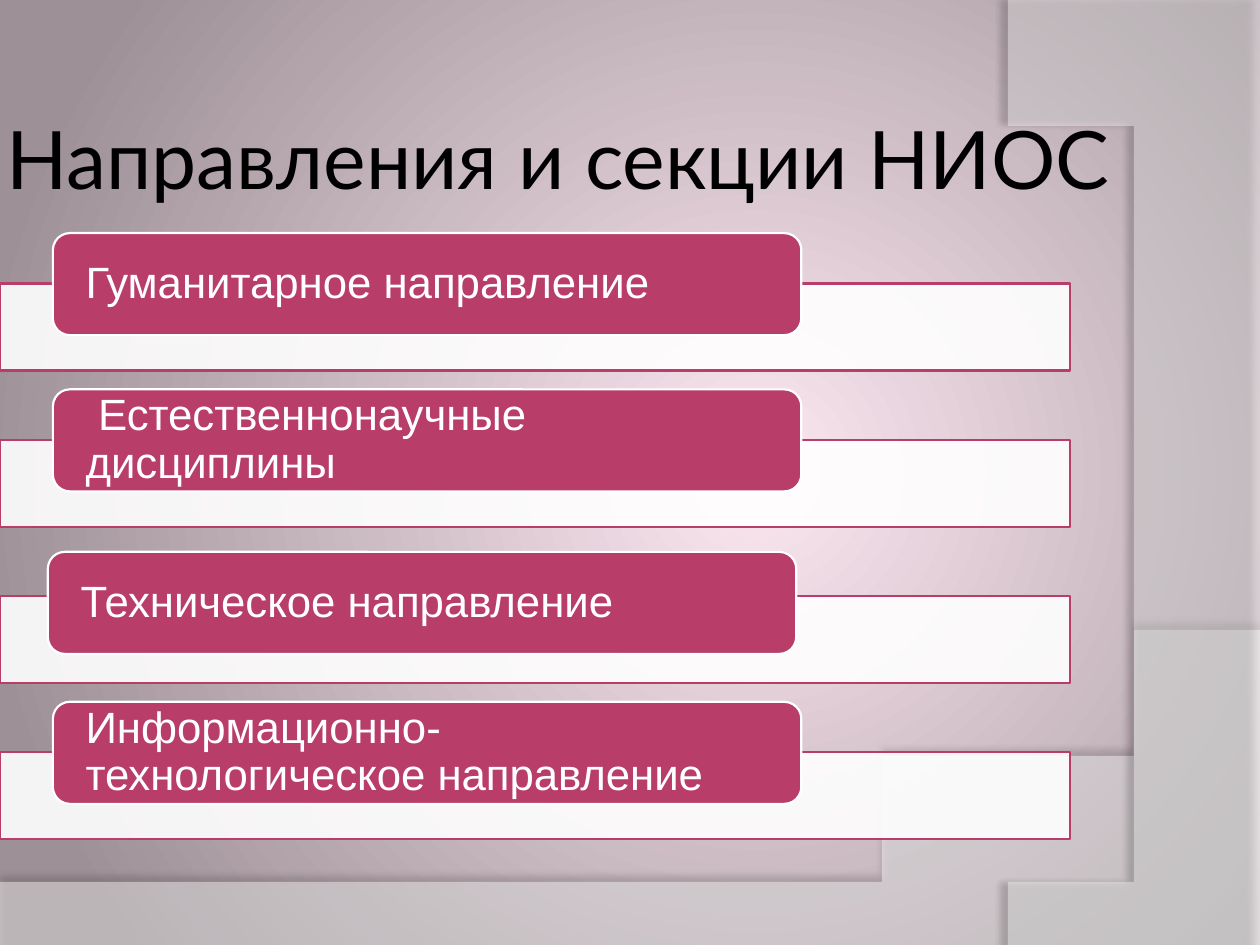
from dataclasses import dataclass

from lxml import etree
from pptx import Presentation
from pptx.dml.color import RGBColor
from pptx.enum.shapes import MSO_SHAPE
from pptx.enum.text import MSO_ANCHOR, PP_ALIGN
from pptx.oxml.ns import qn
from pptx.util import Inches, Pt

RECT, ROUNDED = MSO_SHAPE.RECTANGLE, MSO_SHAPE.ROUNDED_RECTANGLE
MIDDLE, LEFT = MSO_ANCHOR.MIDDLE, PP_ALIGN.LEFT
WIDTH, HEIGHT = 10, 7.5


@dataclass(frozen=True)
class Theme:
    accent: str = "B83D68"
    white: str = "FFFFFF"
    black: str = "000000"
    glow: str = "FCE7F1"
    edge: str = "9D9096"
    title_font: str = "Lato"
    label_font: str = "Arial"
    title_size: float = 46
    label_size: float = 25
    line_width: float = 1.25


THEME = Theme()

# Rows: bars on an even pitch, each with a label overlapping its top edge
FIRST_BAR, PITCH = 2.25, 1.24
BAR_W, BAR_H = 8.49, 0.69
LABEL_X, LABEL_RISE, LABEL_W, LABEL_H = 0.42, 0.4, 5.94, 0.81

# Label text, shift of the label (x, y), first-line indent
ROWS = [
    ("Гуманитарное направление", (0, 0), 0),
    ("Естественнонаучные дисциплины", (0, 0), 0.1),
    ("Техническое направление", (-0.04, 0.05), 0),
    ("Информационно-технологическое направление", (0, 0), 0),
]


def rgb(color):
    return RGBColor.from_string(color)


def sub(parent, tag, **attrs):
    return etree.SubElement(parent, qn(tag), {k: str(v) for k, v in attrs.items()})


def fill_solid(sp, color, opacity=100):
    sp.fill.solid()
    sp.fill.fore_color.rgb = rgb(color)
    if opacity < 100:
        clr = sp.element.spPr.find(qn("a:solidFill"))[0]
        sub(clr, "a:alpha", val=opacity * 1000)


def add_shadow(sp, opacity, blur, distance, angle):
    sp.shadow.inherit = False
    effects = sp.element.spPr.find(qn("a:effectLst"))
    shadow = sub(effects, "a:outerShdw", blurRad=Pt(blur), dist=Pt(distance),
                 dir=angle * 60000, algn="ctr", rotWithShape=0)
    clr = sub(shadow, "a:srgbClr", val=THEME.black)
    sub(clr, "a:alpha", val=opacity * 1000)


def bezier(p0, p1, p2, p3, steps=60):
    """Points of a cubic curve, both ends included."""
    points = []
    for i in range(steps + 1):
        t = i / steps
        u = 1 - t
        weights = (u**3, 3 * u * u * t, 3 * u * t * t, t**3)
        points.append(tuple(sum(w * p[axis] for w, p in zip(weights, (p0, p1, p2, p3)))
                            for axis in (0, 1)))
    return points


def add_wave(slide, points, fill_opacity, **shadow):
    builder = slide.shapes.build_freeform(*points[0], scale=Inches(1))
    builder.add_line_segments(points[1:], close=True)
    sp = builder.convert_to_shape()
    fill_solid(sp, THEME.white, fill_opacity)
    sp.line.fill.background()
    add_shadow(sp, **shadow)


def add_box(slide, preset, box, fill, line, opacity=100):
    sp = slide.shapes.add_shape(preset, *map(Inches, box))
    sp.shadow.inherit = False
    fill_solid(sp, fill, opacity)
    sp.line.color.rgb = rgb(line)
    sp.line.width = Pt(THEME.line_width)
    return sp


def write(sp, text, font, size, color, insets):
    """Put one left-aligned, vertically centred paragraph into a shape."""
    tf = sp.text_frame
    tf.word_wrap = True
    tf.vertical_anchor = MIDDLE
    tf.margin_left = tf.margin_right = Inches(insets[0])
    tf.margin_top = tf.margin_bottom = Inches(insets[1])
    p = tf.paragraphs[0]
    p.text = text
    p.alignment = LEFT
    p.font.name = font
    p.font.size = Pt(size)
    p.font.color.rgb = rgb(color)
    return p


def set_background(slide):
    """Radial gradient centred right of the middle."""
    fill = slide.background.fill
    fill.gradient()
    for stop, color in zip(fill.gradient_stops, (THEME.glow, THEME.edge)):
        stop.color.rgb = rgb(color)
    grad = slide.element.find(".//" + qn("a:gradFill"))
    grad.remove(grad.find(qn("a:lin")))
    radial = sub(grad, "a:path", path="circle")
    sub(radial, "a:fillToRect", l=60000, t=50000, r=40000, b=50000)


def add_waves(slide):
    bottom = bezier((WIDTH, 5.2), (5.59, 7.29), (3.91, 7.19), (0, 7.05))
    add_wave(slide, [(0, HEIGHT), (WIDTH, HEIGHT)] + bottom, 45,
             opacity=35, blur=4, distance=3.5, angle=270)
    side = bezier((8.21, HEIGHT), (9.35, 6.19), (10.18, 3), (8, 0))
    add_wave(slide, [(WIDTH, 0.02), (WIDTH, HEIGHT)] + side, 40,
             opacity=45, blur=4, distance=4, angle=180)


def add_title(slide, text):
    box = (0, HEIGHT / 15, WIDTH * 0.9, HEIGHT / 5)
    sp = slide.shapes.add_textbox(*map(Inches, box))
    write(sp, text, THEME.title_font, THEME.title_size, THEME.black, (0.05, 0.05))


def add_row(slide, index, text, shift, indent):
    top = FIRST_BAR + index * PITCH
    add_box(slide, RECT, (0, top, BAR_W, BAR_H), THEME.white, THEME.accent, 90)
    label_box = (LABEL_X + shift[0], top - LABEL_RISE + shift[1], LABEL_W, LABEL_H)
    label = add_box(slide, ROUNDED, label_box, THEME.accent, THEME.white)
    p = write(label, text, THEME.label_font, THEME.label_size, THEME.white, (0.22, 0))
    p.line_spacing = 0.9
    if indent:
        p._p.get_or_add_pPr().set("indent", str(Inches(indent)))


def main():
    prs = Presentation()
    prs.slide_width, prs.slide_height = Inches(WIDTH), Inches(HEIGHT)
    slide = prs.slides.add_slide(prs.slide_layouts[6])
    set_background(slide)
    add_waves(slide)
    add_title(slide, "Направления и секции НИОС")
    for index, row in enumerate(ROWS):
        add_row(slide, index, *row)
    prs.save("out.pptx")


if __name__ == "__main__":
    main()
